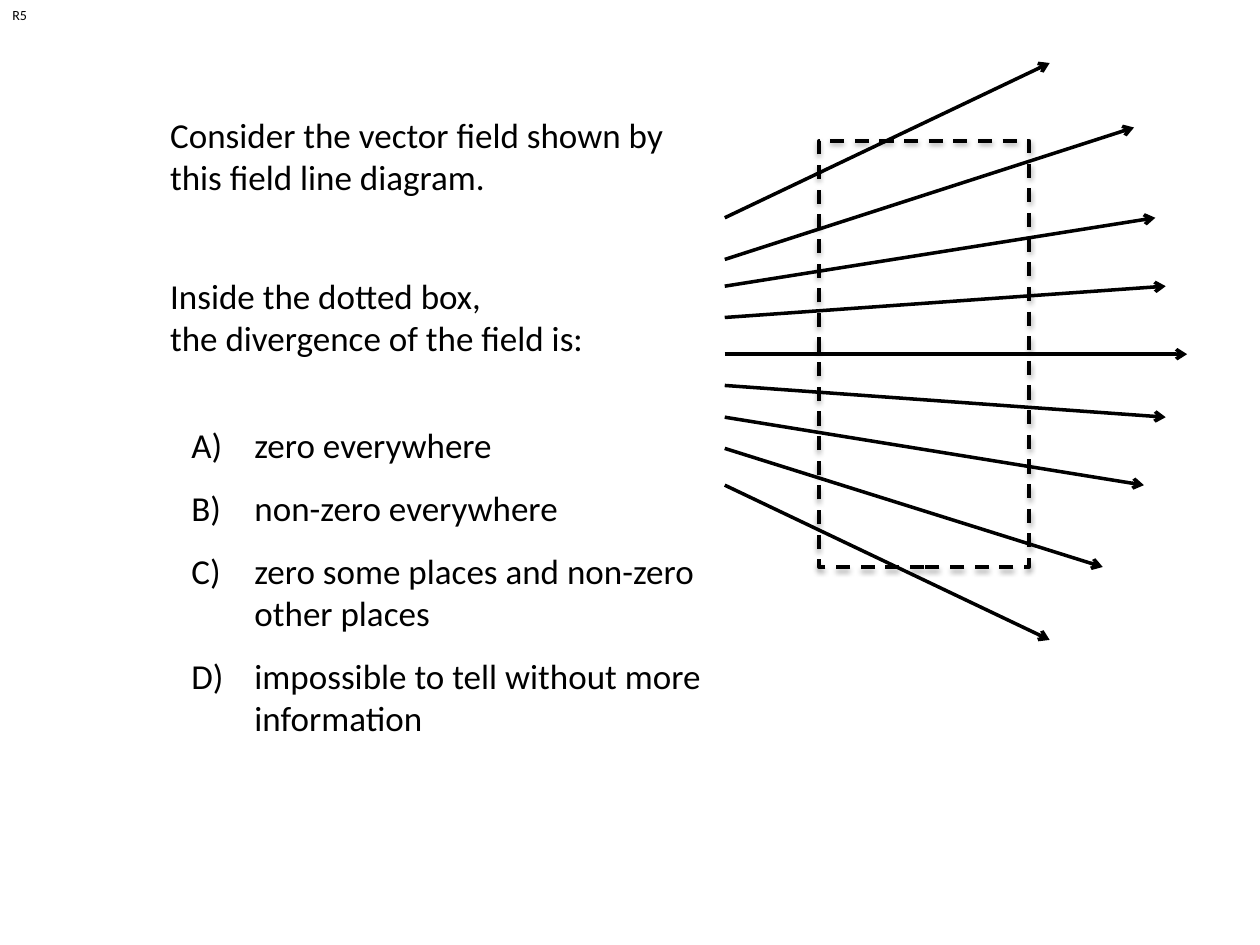
import pptx
import pptx.util
import pptx.dml.color
import pptx.enum.dml
import pptx.enum.shapes
import pptx.enum.text
import pptx.oxml.ns
from lxml import etree

Cm, Pt = pptx.util.Cm, pptx.util.Pt
FONT = "Calibri"
COLORS = {"ink": "000000"}

# left, top, width, height in cm; size in points; paragraphs
TEXTS = [
    ((3.18, 2.16, 11.23, 1.96), 20,
     ["Consider the vector field shown by this field line diagram."]),
    ((3.18, 5.41, 11, 1.96), 20,
     ["Inside the dotted box,", "the divergence of the field is:"]),
    ((0, 0, 0.81, 0.61), 8, ["R5"]),
]
CHOICES = ((3.61, 8.41, 11, 6.68), 20, [
    "zero everywhere",
    "non-zero everywhere",
    "zero some places and non-zero other places",
    "impossible to tell without more information",
])
START = 14.61  # all field lines begin at this x
RAYS = [  # start y, end x, end y
    (4.39, 21.16, 1.27),
    (5.23, 22.86, 2.57),
    (5.77, 23.29, 4.39),
    (6.4, 23.5, 5.77),
    (7.14, 23.93, 7.14),
    (7.77, 23.5, 8.41),
    (8.41, 23.06, 9.78),
    (9.04, 22.23, 11.43),
    (9.78, 21.16, 12.9),
]
BOX = (16.51, 2.84, 4.24, 8.59)


def color(name):
    return pptx.dml.color.RGBColor.from_string(COLORS[name])


def add(node, tag, **attrs):
    """Append a DrawingML child element."""
    values = {key: str(val) for key, val in attrs.items()}
    return etree.SubElement(node, pptx.oxml.ns.qn("a:" + tag), values)


def write(slide, place, size, lines, wrap=True):
    frame = slide.shapes.add_textbox(*map(Cm, place)).text_frame
    frame.word_wrap = wrap
    frame.auto_size = pptx.enum.text.MSO_AUTO_SIZE.SHAPE_TO_FIT_TEXT
    for i, line in enumerate(lines):
        para = frame.add_paragraph() if i else frame.paragraphs[0]
        run = para.add_run()
        run.text = line
        run.font.name = FONT
        run.font.size = Pt(size)
        run.font.color.rgb = color("ink")
    return frame


def letter(frame):
    """Number the paragraphs A), B), C) with a hanging indent."""
    for para in frame.paragraphs:
        para.space_before = Pt(12)
        props = para._p.get_or_add_pPr()
        props.set("marL", str(Cm(1.27)))
        props.set("indent", str(-Cm(1.27)))
        add(props, "buFont", typeface="+mj-lt")
        add(props, "buAutoNum", type="alphaUcParenR")


def stroke(shape):
    shape.line.color.rgb = color("ink")
    shape.line.width = Pt(2)


def draw_ray(slide, top, right, end):
    kind = pptx.enum.shapes.MSO_CONNECTOR.STRAIGHT
    ray = slide.shapes.add_connector(kind, *map(Cm, (START, top, right, end)))
    stroke(ray)
    add(ray.line._get_or_add_ln(), "tailEnd", type="arrow")
    add(ray._element.spPr, "effectLst")


def draw_box(slide):
    kind = pptx.enum.shapes.MSO_SHAPE.RECTANGLE
    box = slide.shapes.add_shape(kind, *map(Cm, BOX))
    box.fill.background()
    stroke(box)
    box.line.dash_style = pptx.enum.dml.MSO_LINE.DASH
    box.shadow.inherit = False
    effects = box._element.spPr.find(pptx.oxml.ns.qn("a:effectLst"))
    shade = add(effects, "outerShdw", blurRad=Pt(3.1), dist=Pt(1.8),
                dir=90 * 60000, rotWithShape=0)
    add(add(shade, "srgbClr", val=COLORS["ink"]), "alpha", val=35000)


def main():
    deck = pptx.Presentation()
    deck.slide_width, deck.slide_height = Cm(25.4), Cm(19.05)
    slide = deck.slides.add_slide(deck.slide_layouts[6])
    for ray in RAYS:
        draw_ray(slide, *ray)
    draw_box(slide)
    for place, size, lines in TEXTS:
        write(slide, place, size, lines, wrap=size > 8)
    letter(write(slide, *CHOICES))
    deck.save("out.pptx")


if __name__ == "__main__":
    main()
